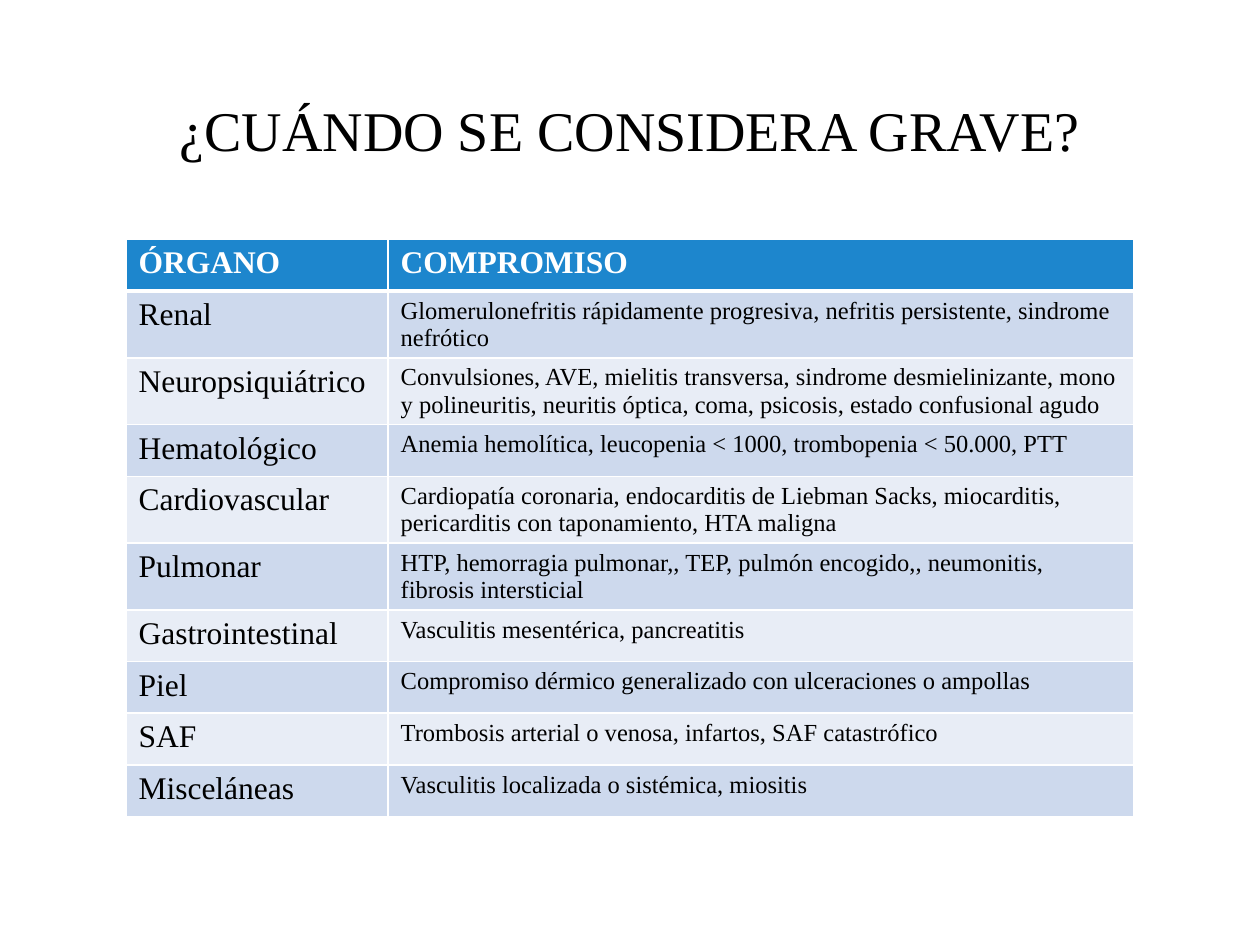
from lxml.etree import SubElement
from pptx import Presentation
from pptx.dml.color import RGBColor
from pptx.enum.text import MSO_ANCHOR, PP_ALIGN
from pptx.oxml.ns import qn
from pptx.util import Inches, Pt

FONT = "Times New Roman"
HEADER_FILL = "1D86CD"
BAND_FILLS = ("E8EDF6", "CDD9ED")
ORGAN_SIZE, INVOLVEMENT_SIZE = 18, 14

ROWS = [
    ("ÓRGANO", "COMPROMISO"),
    ("Renal", "Glomerulonefritis rápidamente progresiva, nefritis persistente, "
              "sindrome nefrótico"),
    ("Neuropsiquiátrico", "Convulsiones, AVE, mielitis transversa, sindrome "
                          "desmielinizante, mono y polineuritis, neuritis óptica, "
                          "coma, psicosis, estado confusional agudo"),
    ("Hematológico", "Anemia hemolítica, leucopenia < 1000, trombopenia < 50.000, PTT"),
    ("Cardiovascular", "Cardiopatía coronaria, endocarditis de Liebman Sacks, "
                       "miocarditis, pericarditis con taponamiento, HTA maligna"),
    ("Pulmonar", "HTP, hemorragia pulmonar,, TEP, pulmón encogido,, neumonitis, "
                 "fibrosis intersticial"),
    ("Gastrointestinal", "Vasculitis mesentérica, pancreatitis"),
    ("Piel", "Compromiso dérmico generalizado con ulceraciones o ampollas"),
    ("SAF", "Trombosis arterial o venosa, infartos, SAF catastrófico"),
    ("Misceláneas", "Vasculitis localizada o sistémica, miositis"),
]


def add_run(paragraph, text, size, color, bold=False):
    run = paragraph.add_run()
    run.text = text
    run.font.name = FONT
    run.font.size = Pt(size)
    run.font.bold = bold
    run.font.color.rgb = RGBColor.from_string(color)


def paint_cell(cell, fill, bottom_width):
    # Borders come before the fill in the cell properties
    properties = cell._tc.get_or_add_tcPr()
    for side, width in (("L", 1), ("R", 1), ("T", 1), ("B", bottom_width)):
        border = SubElement(properties, qn(f"a:ln{side}"), w=str(Pt(width)))
        solid = SubElement(border, qn("a:solidFill"))
        SubElement(solid, qn("a:srgbClr"), val="FFFFFF")
    cell.fill.solid()
    cell.fill.fore_color.rgb = RGBColor.from_string(fill)


presentation = Presentation()
presentation.slide_width, presentation.slide_height = Inches(10), Inches(7.5)
slide = presentation.slides.add_slide(presentation.slide_layouts[5])
margin = Inches(1)
content_width = presentation.slide_width - 2 * margin

# Title
title = slide.shapes.title
title.left, title.top = margin, Inches(0.55)
title.width, title.height = content_width, Inches(0.95)
title.text_frame.vertical_anchor = MSO_ANCHOR.MIDDLE
heading = title.text_frame.paragraphs[0]
heading.alignment = PP_ALIGN.CENTER
add_run(heading, "¿CUÁNDO SE CONSIDERA GRAVE?", 32, "000000")

# Table of organs and their involvement; rows grow with wrapped text
row_height = Inches(0.41)
organs = slide.shapes.add_table(len(ROWS), 2, margin, Inches(1.9),
                                content_width, row_height * len(ROWS)).table
organs.columns[0].width = int(content_width * 0.26)
organs.columns[1].width = content_width - organs.columns[0].width

for row, texts in enumerate(ROWS):
    organs.rows[row].height = row_height
    is_header = row == 0
    fill = HEADER_FILL if is_header else BAND_FILLS[row % 2]
    color = "FFFFFF" if is_header else "000000"
    for column, text in enumerate(texts):
        cell = organs.cell(row, column)
        paint_cell(cell, fill, 3 if is_header else 1)
        size = ORGAN_SIZE if is_header or column == 0 else INVOLVEMENT_SIZE
        add_run(cell.text_frame.paragraphs[0], text, size, color, is_header)

presentation.save("out.pptx")
